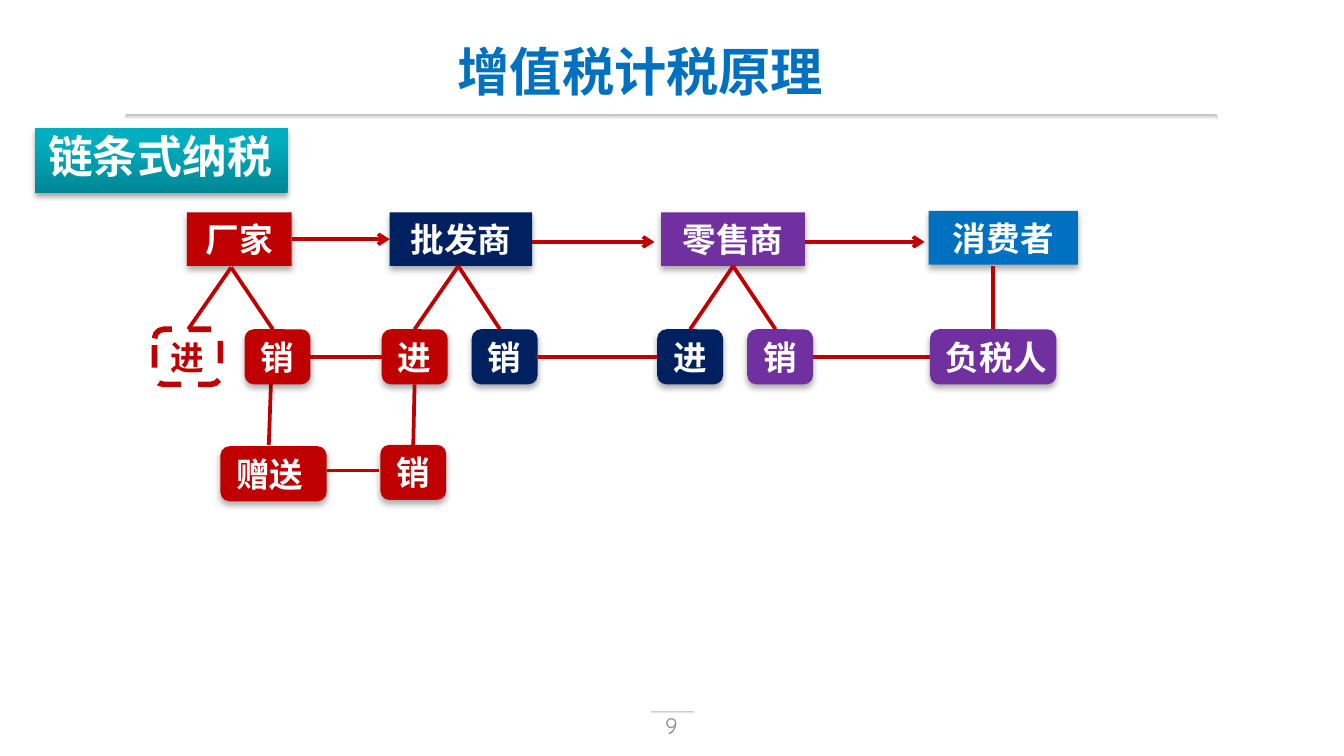
from lxml.etree import SubElement
from pptx import Presentation
from pptx.dml.color import RGBColor
from pptx.enum.dml import MSO_LINE
from pptx.enum.shapes import MSO_CONNECTOR, MSO_SHAPE
from pptx.enum.text import MSO_ANCHOR, PP_ALIGN
from pptx.oxml import parse_xml
from pptx.oxml.ns import nsdecls, qn
from pptx.util import Inches, Pt

RED = RGBColor(0xC0, 0x00, 0x00)
NAVY = RGBColor(0x00, 0x20, 0x60)
PURPLE = RGBColor(0x70, 0x30, 0xA0)
BLUE = RGBColor(0x00, 0x70, 0xC0)
WHITE = RGBColor(0xFF, 0xFF, 0xFF)
GREY = RGBColor(0x8C, 0x8C, 0x8C)
SILVER = RGBColor(0xBF, 0xBF, 0xBF)
TEAL_DARK = RGBColor(0x00, 0x86, 0x94)
TEAL_MID = RGBColor(0x00, 0xAE, 0xC0)
TEAL = RGBColor(0x00, 0xAF, 0xC1)
CJK = "Noto Sans CJK SC"
TOP, LEFT, BOTTOM, RIGHT = range(4)
NODE_W, NODE_H = 0.49, 0.41


def write(sp, text, size, color, font=CJK, bold=True, align=PP_ALIGN.LEFT, **frame):
    tf = sp.text_frame
    for name, value in {"word_wrap": True, "vertical_anchor": MSO_ANCHOR.MIDDLE, **frame}.items():
        setattr(tf, name, value)
    p = tf.paragraphs[0]
    p.alignment = align
    r = p.add_run()
    r.text = text
    for name, value in {"name": font, "size": Pt(size), "bold": bold}.items():
        setattr(r.font, name, value)
    r.font.color.rgb = color
    SubElement(r.font._element, qn("a:ea")).set("typeface", font)
    return p


def add_box(s, kind, x, y, w, h, fill=None):
    sp = s.shapes.add_shape(kind, Inches(x), Inches(y), Inches(w), Inches(h))
    sp.shadow.inherit = False
    sp.line.fill.background()
    if fill is None:
        sp.fill.background()
    else:
        sp.fill.solid()
        sp.fill.fore_color.rgb = fill
    return sp


def set_gradient(sp, stops, angle):
    marks = "".join(f'<a:gs pos="{pos * 1000}"><a:srgbClr val="{c}"/></a:gs>' for pos, c in stops)
    spPr = sp._element.spPr
    grad = parse_xml(f'<a:gradFill {nsdecls("a")}><a:gsLst>{marks}</a:gsLst>'
                     f'<a:lin ang="{angle * 60000}" scaled="0"/></a:gradFill>')
    spPr.replace(spPr.find(qn("a:noFill")), grad)


def set_shadow(sp, alpha=32, blur=3.5, dist=2.2):
    effects = sp._element.spPr.find(qn("a:effectLst"))
    effects.append(parse_xml(
        f'<a:outerShdw {nsdecls("a")} blurRad="{Pt(blur)}" dist="{Pt(dist)}" dir="5400000" '
        f'rotWithShape="0"><a:srgbClr val="000000"><a:alpha val="{alpha * 1000}"/>'
        '</a:srgbClr></a:outerShdw>'))


def add_rule(s, x, y, w, h):
    sp = add_box(s, MSO_SHAPE.ROUNDED_RECTANGLE, x, y, w, h)
    sp.adjustments[0] = 0.5
    set_gradient(sp, [(0, SILVER), (100, WHITE)], 90)


def add_link(s, start, end, arrow=False):
    """Each end is an (x, y) point or a (shape, site) pair."""
    ends = [e if isinstance(e[0], (int, float)) else (0, 0) for e in (start, end)]
    cn = s.shapes.add_connector(MSO_CONNECTOR.STRAIGHT, *[Inches(v) for e in ends for v in e])
    for e, connect in ((start, cn.begin_connect), (end, cn.end_connect)):
        if not isinstance(e[0], (int, float)):
            connect(*e)
    cn.line.color.rgb = RED
    cn.line.width = Pt(2)
    if arrow:
        SubElement(cn.line._get_or_add_ln(), qn("a:tailEnd")).set("type", "arrow")
    SubElement(cn._element.spPr, qn("a:effectLst"))


def add_party(s, text, x, y, w, fill):
    sp = add_box(s, MSO_SHAPE.RECTANGLE, x, y, w, 0.4, fill)
    set_shadow(sp)
    write(sp, text, 18, WHITE, align=PP_ALIGN.CENTER)
    return sp


def add_node(s, text, x, y, fill, w=NODE_W):
    sp = add_box(s, MSO_SHAPE.ROUNDED_RECTANGLE, x, y, w, NODE_H, fill)
    if fill is None:
        sp.line.color.rgb = RED
        sp.line.width = Pt(3)
        sp.line.dash_style = MSO_LINE.DASH
    else:
        set_shadow(sp)
    write(sp, text, 18, RED if fill is None else WHITE, word_wrap=False)
    return sp


def add_text(s, text, x, y, w, h, size, color, font, bold, anchor):
    tb = s.shapes.add_textbox(Inches(x), Inches(y), Inches(w), Inches(h))
    write(tb, text, size, color, font, bold, PP_ALIGN.CENTER, vertical_anchor=anchor,
          margin_left=Inches(0.07), margin_right=Inches(0.07),
          margin_top=Inches(0.04), margin_bottom=Inches(0.04))


def draw_header(s, x, y, w):
    add_rule(s, x, y + 0.6, w, 0.04)
    add_text(s, "增值税计税原理", x + 0.45, y, 6.77, 0.55, 28, BLUE, "Arial", True, MSO_ANCHOR.TOP)


def draw_banner(s, x, y, w, h):
    sp = add_box(s, MSO_SHAPE.RECTANGLE, x, y, w, h)
    set_gradient(sp, [(0, TEAL_DARK), (80, TEAL_MID), (100, TEAL)], 270)
    set_shadow(sp, 35, 3.1, 1.8)
    p = write(sp, "链条式纳税", 24, WHITE, vertical_anchor=MSO_ANCHOR.TOP)
    p.line_spacing = 0.9


def draw_chain(s, x, y):
    node_y, gift_y = y + 0.88, y + 1.74
    # Runs behind the sales node down to the gift node
    add_link(s, (x + 0.88, node_y), (x + 0.85, gift_y))

    # Parties in the chain
    maker, wholesaler, retailer, consumer = [
        add_party(s, text, x + dx, y + dy, w, fill) for text, dx, dy, w, fill in (
            ("厂家", 0.24, 0.01, 0.78, RED), ("批发商", 1.75, 0.01, 1.06, NAVY),
            ("零售商", 3.77, 0.01, 1.07, PURPLE), ("消费者", 5.76, 0, 1.11, BLUE))]
    add_link(s, (maker, RIGHT), (wholesaler, LEFT), arrow=True)
    for x1, x2 in ((2.81, 3.72), (4.84, 5.73)):
        add_link(s, (x + x1, y + 0.23), (x + x2, y + 0.23), arrow=True)

    # Purchase and sales nodes
    pairs = [(add_node(s, "进", x + dx, node_y, buy),
              add_node(s, "销", x + dx + 0.67, node_y, sell))
             for dx, buy, sell in ((0, None, RED), (1.69, RED, NAVY), (3.74, NAVY, PURPLE))]
    payer = add_node(s, "负税人", x + 5.77, node_y, PURPLE, 0.94)

    # Forks from each party to its nodes
    for apex, buy, sell in (
            ((x + 0.57, y + 0.42), (x + 0.25, node_y), (x + 0.88, node_y)),
            ((x + 2.26, y + 0.41), (pairs[1][0], TOP), (x + 2.57, node_y)),
            ((retailer, BOTTOM), (pairs[2][0], TOP), (x + 4.62, node_y))):
        add_link(s, apex, buy)
        add_link(s, apex, sell)
    add_link(s, (x + 6.24, y + 0.41), (payer, TOP))

    # One party's sale is the next one's purchase
    buyers = [pairs[1][0], pairs[2][0], payer]
    for (_, seller), buyer in zip(pairs, buyers):
        add_link(s, (seller, RIGHT), (buyer, LEFT))

    # Gift branch
    add_node(s, "赠送", x + 0.49, gift_y + 0.01, RED, 0.79)
    resale = add_node(s, "销", x + 1.68, gift_y, RED)
    add_link(s, (x + 1.67, gift_y + 0.19), (x + 1.28, gift_y + 0.19))
    add_link(s, (pairs[1][0], BOTTOM), (resale, TOP))


def draw_footer(s, x, y, w, h):
    add_rule(s, x + 1.01, y + 0.04, 0.32, 0.02)
    add_text(s, "9", x, y, w, h, 12, GREY, "Quicksand", False, MSO_ANCHOR.MIDDLE)


def main():
    prs = Presentation()
    prs.slide_width = Inches(10)
    prs.slide_height = prs.slide_width * 9 // 16
    s = prs.slides.add_slide(prs.slide_layouts[6])
    draw_header(s, 0.93, 0.25, 8.13)
    draw_banner(s, 0.26, 0.95, 1.88, 0.49)
    draw_chain(s, 1.15, 1.57)
    draw_footer(s, 3.83, 5.25, 2.33, 0.3)
    prs.save("out.pptx")


if __name__ == "__main__":
    main()
